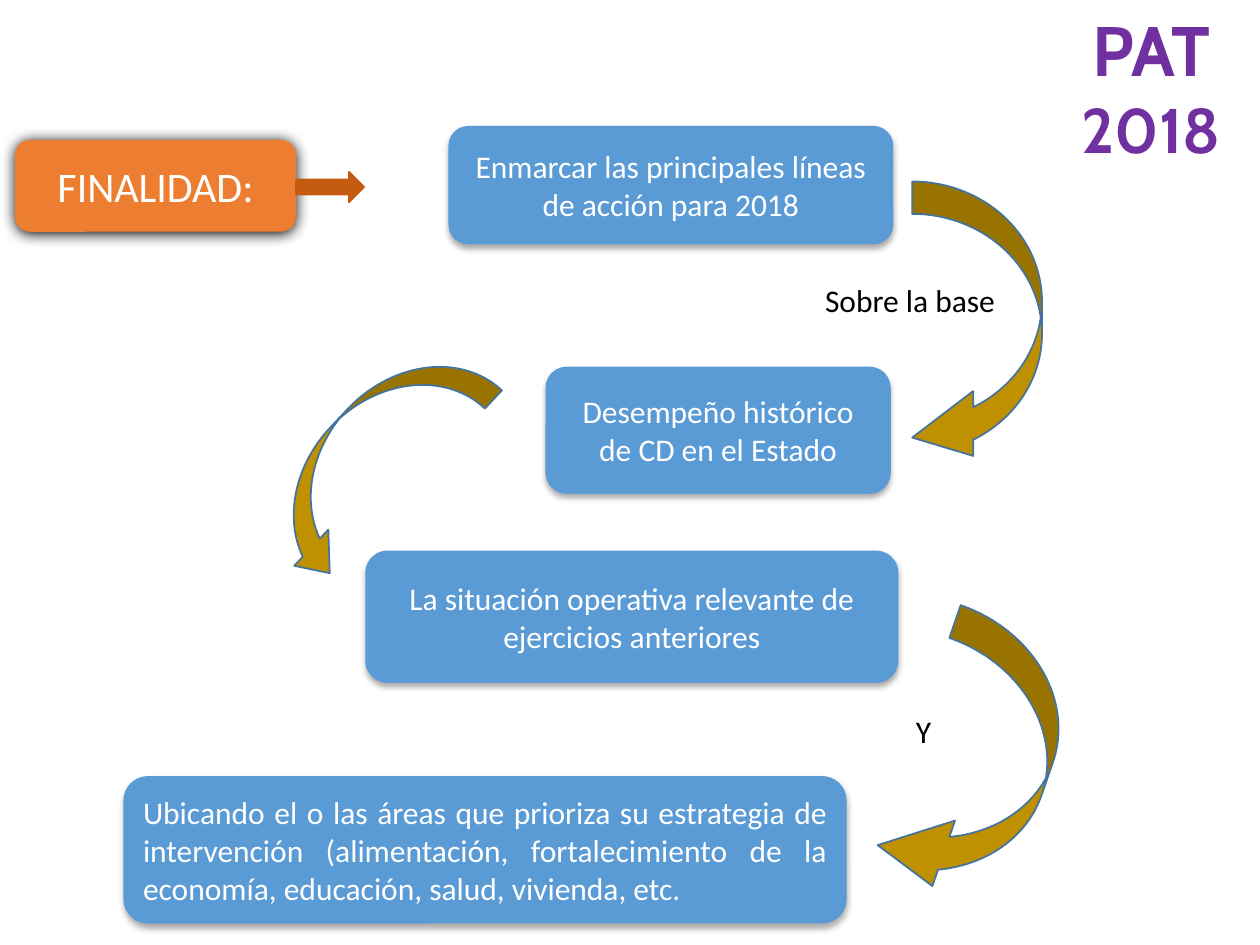
from lxml import etree
from pptx import Presentation
from pptx.dml.color import RGBColor
from pptx.enum.shapes import MSO_SHAPE
from pptx.enum.text import MSO_ANCHOR, MSO_AUTO_SIZE, PP_ALIGN
from pptx.oxml.ns import qn
from pptx.util import Inches, Pt

ROUND_RECT = MSO_SHAPE.ROUNDED_RECTANGLE
RIGHT_ARROW = MSO_SHAPE.RIGHT_ARROW
CURVED_LEFT = MSO_SHAPE.CURVED_LEFT_ARROW
CURVED_RIGHT = MSO_SHAPE.CURVED_RIGHT_ARROW
TOP, MIDDLE = MSO_ANCHOR.TOP, MSO_ANCHOR.MIDDLE
NO_FIT = MSO_AUTO_SIZE.NONE
LEFT, CENTER, JUSTIFY = PP_ALIGN.LEFT, PP_ALIGN.CENTER, PP_ALIGN.JUSTIFY

WHITE, BLACK, PURPLE = "FFFFFF", "000000", "7030A0"
ORANGE, DARK_ORANGE = "ED7D31", "C55A11"
BLUE, DARK_BLUE, GOLD = "5B9BD5", "43739E", "BF9000"

# Shadow: opacity in percent, blur and distance in points
SOFT_SHADOW = (32, 3.5, 2.2)
STRONG_SHADOW = (100, 8.5, 1)


def color(hex_string):
    return RGBColor.from_string(hex_string)


def add_run(p, text, size, hex_string, font="Calibri", bold=False):
    r = p.add_run()
    r.text = text
    r.font.size = Pt(size)
    r.font.name = font
    r.font.bold = bold
    r.font.color.rgb = color(hex_string)


def set_shadow(sp, opacity, blur, distance):
    effects = sp._element.spPr.find(qn("a:effectLst"))
    shadow = etree.SubElement(
        effects, qn("a:outerShdw"), blurRad=str(Pt(blur)), dist=str(Pt(distance)),
        dir="5400000", algn="ctr", rotWithShape="0")
    rgb = etree.SubElement(shadow, qn("a:srgbClr"), val=BLACK)
    etree.SubElement(rgb, qn("a:alpha"), val=str(opacity * 1000))


def add_filled(slide, kind, box, fill, line=None):
    sp = slide.shapes.add_shape(kind, *map(Inches, box))
    sp.shadow.inherit = False
    sp.fill.solid()
    sp.fill.fore_color.rgb = color(fill)
    if line:
        sp.line.color.rgb = color(line)
        sp.line.width = Pt(1)
    else:
        sp.line.fill.background()
    return sp


def add_card(slide, box, text, fill=BLUE, size=18, align=CENTER, shadow=SOFT_SHADOW):
    sp = add_filled(slide, ROUND_RECT, box, fill)
    set_shadow(sp, *shadow)
    tf = sp.text_frame
    tf.word_wrap = True
    tf.vertical_anchor = MIDDLE
    p = tf.paragraphs[0]
    p.alignment = align
    add_run(p, text, size, WHITE)


def add_curved_arrow(slide, kind, box, head, rotation=0):
    sp = add_filled(slide, kind, box, GOLD, DARK_BLUE)
    sp.adjustments[2] = head
    sp.rotation = rotation


def add_label(slide, box, text):
    tf = slide.shapes.add_textbox(*map(Inches, box)).text_frame
    tf.word_wrap = True
    p = tf.paragraphs[0]
    p.alignment = LEFT
    add_run(p, text, 18, BLACK)


def add_title(slide, box):
    title = slide.shapes.title
    title.left, title.top, title.width, title.height = map(Inches, box)
    tf = title.text_frame
    tf.word_wrap = True
    tf.auto_size = NO_FIT
    tf.vertical_anchor = TOP
    p = tf.paragraphs[0]
    p.alignment = CENTER
    add_run(p, "PAT", 40, PURPLE, "Cabin", True)
    add_run(p, " 2018", 36, PURPLE, "Cabin", True)


def add_purpose(slide, left, top, width, height):
    add_card(slide, (left, top, width, height), "FINALIDAD:", ORANGE, 24,
             shadow=STRONG_SHADOW)
    arrow_height = 0.24
    arrow_top = top + (height - arrow_height) / 2 + 0.01
    add_filled(slide, RIGHT_ARROW, (left + width, arrow_top, 0.54, arrow_height),
               DARK_ORANGE, DARK_ORANGE)


def main():
    prs = Presentation()
    prs.slide_width, prs.slide_height = Inches(10), Inches(7.5)
    slide = prs.slides.add_slide(prs.slide_layouts[5])

    # Heading and purpose
    add_title(slide, (8.27, 0, 1.73, 1.38))
    add_purpose(slide, 0.12, 1.11, 2.23, 0.73)

    # Steps
    add_card(slide, (3.56, 1, 3.53, 0.94),
             "Enmarcar las principales líneas de acción para 2018")
    add_card(slide, (4.33, 2.91, 2.74, 1.01),
             "Desempeño histórico de CD en el Estado")
    add_card(slide, (2.9, 4.37, 4.23, 1.05),
             "La situación operativa relevante de ejercicios anteriores")
    add_card(slide, (0.98, 6.16, 5.74, 1.17),
             "Ubicando el o las áreas que prioriza su estrategia de intervención "
             "(alimentación, fortalecimiento de la economía, educación, salud, "
             "vivienda, etc.", align=JUSTIFY)

    # Links between the steps
    add_label(slide, (6.45, 2.18, 2, 0.4), "Sobre la base")
    add_curved_arrow(slide, CURVED_LEFT, (7.24, 1.44, 1.03, 2.29), 0.47)
    add_curved_arrow(slide, CURVED_RIGHT, (2.55, 2.53, 0.79, 2.19), 0.31, 43.3)
    add_label(slide, (7.17, 5.6, 0.57, 0.4), "Y")
    add_curved_arrow(slide, CURVED_LEFT, (7.22, 4.92, 1.1, 2.29), 0.47, 19.1)

    prs.save("out.pptx")


if __name__ == "__main__":
    main()
